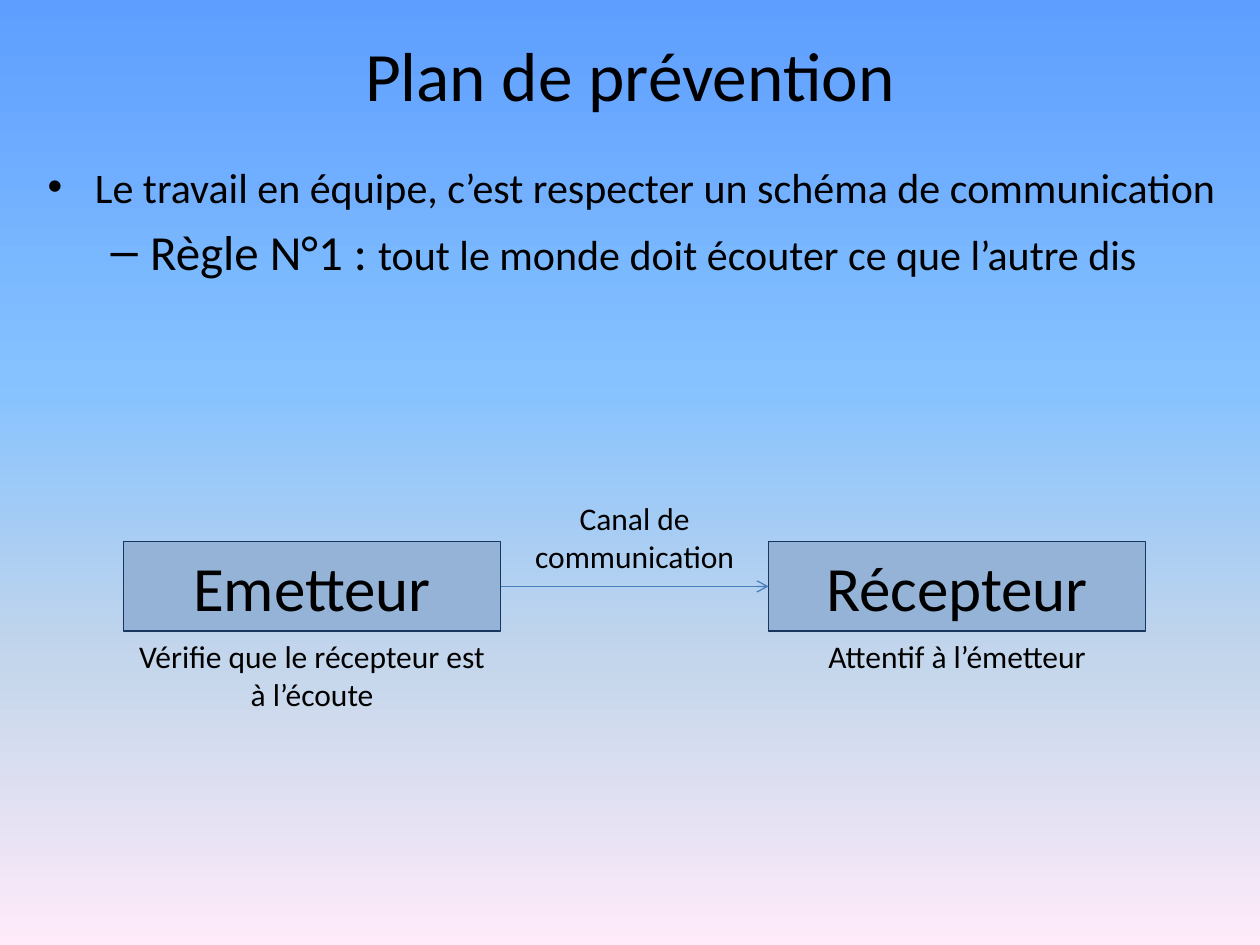
import pptx
import pptx.dml.color
import pptx.enum.shapes
import pptx.enum.text
import pptx.oxml.ns
import pptx.util
from lxml import etree

Pt = pptx.util.Pt
RGBColor = pptx.dml.color.RGBColor
Align = pptx.enum.text.PP_ALIGN
Anchor = pptx.enum.text.MSO_ANCHOR
qn = pptx.oxml.ns.qn

BLACK = RGBColor(0x00, 0x00, 0x00)
BOX_FILL = RGBColor(0x95, 0xB3, 0xD7)
BOX_LINE = RGBColor(0x17, 0x37, 0x5E)
ARROW = RGBColor(0x4B, 0x7E, 0xBC)
SKY = [
    (0, RGBColor(0x5E, 0x9E, 0xFF)),
    (40, RGBColor(0x85, 0xC2, 0xFF)),
    (70, RGBColor(0xC4, 0xD6, 0xEB)),
    (100, RGBColor(0xFF, 0xEB, 0xFA)),
]
FONT = "Calibri"

TITLE = "Plan de prévention"
BULLETS = [
    ("•", 0, 27, 27, 4.8, [("Le travail en équipe, c’est respecter un schéma de communication", 24)]),
    ("–", 1, 58.5, 22.5, 5.6, [("Règle N°1 : ", 28), ("tout le monde doit écouter ce que l’autre dis", 24)]),
]
ACTORS = [
    ("Emetteur", "Vérifie que le récepteur est à l’écoute", 51),
    ("Récepteur", "Attentif à l’émetteur", 29),
]
CHANNEL = "Canal de communication"

BOX_LEFT, BOX_TOP, BOX_WIDTH, BOX_HEIGHT = 70.6, 309.6, 215.5, 51
BOX_STEP = 368.6
CHANNEL_WIDTH = 130.5


def paint_background(page):
    page.background.fill.gradient()
    gradient = page.element.find(".//" + qn("a:gradFill"))
    stops = gradient.find(qn("a:gsLst"))
    for stop in list(stops):
        stops.remove(stop)
    for percent, color in SKY:
        stop = etree.SubElement(stops, qn("a:gs"), pos=str(percent * 1000))
        etree.SubElement(stop, qn("a:srgbClr"), val=str(color))
    gradient.find(qn("a:lin")).set("ang", "5400000")


def add_span(para, text, size):
    span = para.add_run()
    span.text = text
    span.font.name = FONT
    span.font.size = Pt(size)
    span.font.color.rgb = BLACK


def add_text(shapes, left, top, width, height):
    box = shapes.add_textbox(Pt(left), Pt(top), Pt(width), Pt(height))
    box.text_frame.word_wrap = True
    return box.text_frame


def write_centered(frame, text, size):
    para = frame.paragraphs[0]
    para.alignment = Align.CENTER
    add_span(para, text, size)
    return para


def add_bullets(page):
    frame = add_text(page.shapes, 20.2, 88.6, 686.2, 393.8)
    for index, (mark, level, margin, hanging, before, spans) in enumerate(BULLETS):
        para = frame.add_paragraph() if index else frame.paragraphs[0]
        para.level = level
        para.space_before = Pt(before)
        for text, size in spans:
            add_span(para, text, size)
        properties = para._p.get_or_add_pPr()
        properties.set("marL", str(Pt(margin)))
        properties.set("indent", str(-Pt(hanging)))
        etree.SubElement(properties, qn("a:buFont"), typeface="Arial")
        etree.SubElement(properties, qn("a:buChar"), char=mark)


def add_title(page):
    frame = add_text(page.shapes, 36, 21.6, 648, 49.7)
    frame.vertical_anchor = Anchor.MIDDLE
    write_centered(frame, TITLE, 39.6).line_spacing = 0.8


def add_actor(group, name, left):
    box = group.shapes.add_shape(
        pptx.enum.shapes.MSO_SHAPE.RECTANGLE, Pt(left), Pt(BOX_TOP), Pt(BOX_WIDTH), Pt(BOX_HEIGHT)
    )
    box.shadow.inherit = False
    box.fill.solid()
    box.fill.fore_color.rgb = BOX_FILL
    box.line.color.rgb = BOX_LINE
    box.line.width = Pt(0.75)
    box.text_frame.word_wrap = True
    box.text_frame.vertical_anchor = Anchor.TOP
    write_centered(box.text_frame, name, 36)


def add_channel(group):
    start, end = BOX_LEFT + BOX_WIDTH, BOX_LEFT + BOX_STEP
    middle = BOX_TOP + BOX_HEIGHT / 2
    arrow = group.shapes.add_connector(
        pptx.enum.shapes.MSO_CONNECTOR.STRAIGHT, Pt(start), Pt(middle), Pt(end), Pt(middle)
    )
    arrow.line.color.rgb = ARROW
    arrow.line.width = Pt(0.75)
    etree.SubElement(arrow.line._get_or_add_ln(), qn("a:tailEnd"), type="arrow")
    etree.SubElement(arrow._element.spPr, qn("a:effectLst"))
    left = (start + end - CHANNEL_WIDTH) / 2
    write_centered(add_text(group.shapes, left, 281.5, CHANNEL_WIDTH, 51), CHANNEL, 18)


def main():
    deck = pptx.Presentation()
    deck.slide_width, deck.slide_height = Pt(720), Pt(540)
    page = deck.slides.add_slide(deck.slide_layouts[6])
    paint_background(page)
    add_bullets(page)
    add_title(page)
    group = page.shapes.add_group_shape()
    for index, (name, role, height) in enumerate(ACTORS):
        left = BOX_LEFT + index * BOX_STEP
        add_actor(group, name, left)
        frame = add_text(page.shapes, left, BOX_TOP + BOX_HEIGHT, BOX_WIDTH, height)
        write_centered(frame, role, 18)
    add_channel(group)
    deck.save("out.pptx")


if __name__ == "__main__":
    main()
